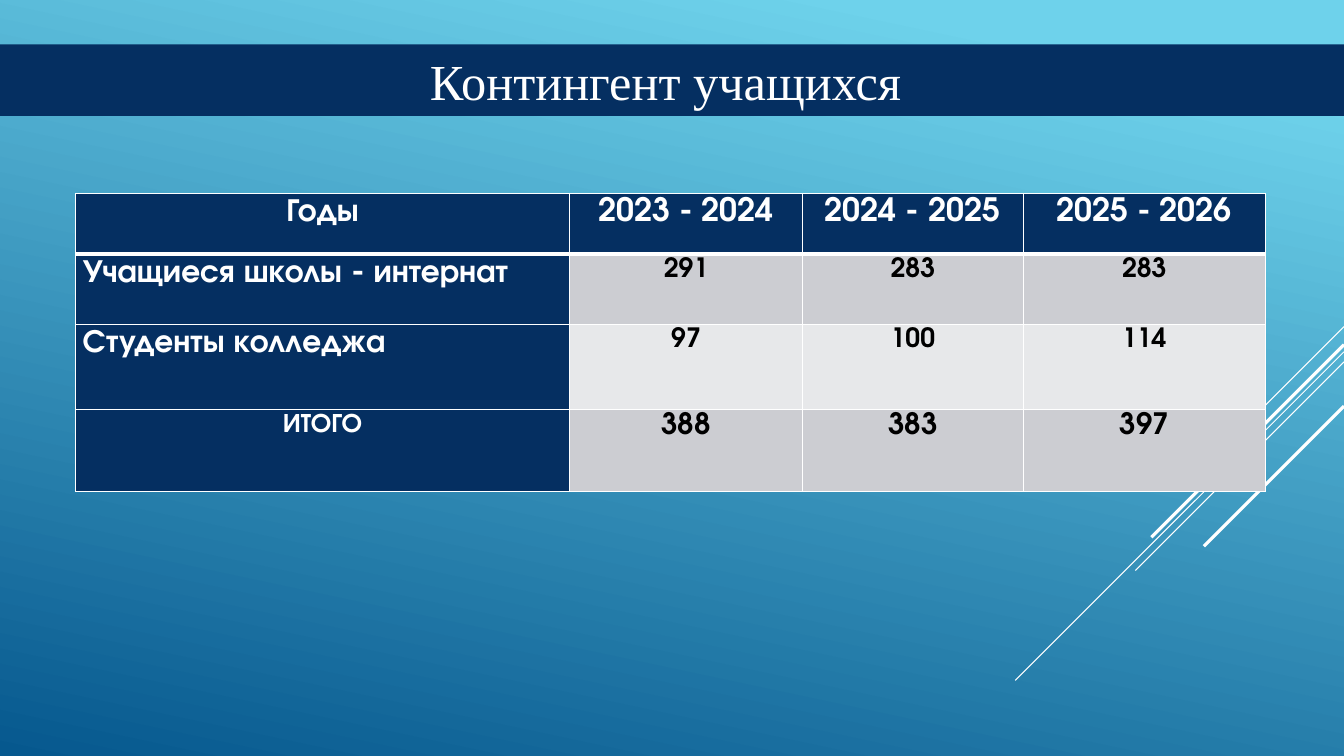
from pptx import Presentation
from pptx import util as u
from pptx.dml.color import RGBColor
from pptx.enum import shapes, text
from pptx.oxml import parse_xml
from pptx.oxml.ns import nsdecls, qn

NAVY = RGBColor(0x05, 0x2F, 0x61)
WHITE = RGBColor(0xFF, 0xFF, 0xFF)
BLACK = RGBColor(0, 0, 0)
GREY = RGBColor(0xCC, 0xCD, 0xD2)
PALE = RGBColor(0xE7, 0xE8, 0xEA)
SKY = RGBColor(0x6E, 0xD2, 0xEB)
DEEP = RGBColor(0x06, 0x58, 0x8E)

# Content
TITLE = "Контингент учащихся "
TITLE_FONT, TABLE_FONT = "Times New Roman", "TeX Gyre Adventor"
ROWS = [
    ("Годы", "2023 - 2024", "2024 - 2025", "2025 - 2026"),
    ("Учащиеся школы - интернат", "291", "283", "283"),
    ("Студенты колледжа", "97", "100", "114"),
    ("ИТОГО", "388", "383", "397"),
]
# Per row: height, label size, value size, value fill, label alignment
CENTER, LEFT = text.PP_ALIGN.CENTER, text.PP_ALIGN.LEFT
ROW_STYLES = [
    (0.6, 23, 23, NAVY, CENTER),
    (0.7, 23, 19, GREY, LEFT),
    (0.84, 23, 19, PALE, LEFT),
    (0.82, 19, 21, GREY, CENTER),
]
COLUMN_WIDTHS = [4.9, 2.31, 2.19, 2.4]
# Diagonals from the right edge: start height, run, weight
DIAGONALS = [(3.24, 1, 0.75), (3.49, 3.26, 0.75), (3.59, 2.07, 0.75),
             (3.42, 1.91, 2.25), (4.03, 1.39, 2.25)]
WIDTH, HEIGHT = 13.33, 7.5


def add_text(para, words, font, size, color, bold=False):
    span = para.add_run()
    span.text = words
    span.font.name = font
    span.font.size = u.Pt(size)
    span.font.bold = bold
    span.font.color.rgb = color


def add_borders(cell, bottom, top):
    props = cell._tc.get_or_add_tcPr()
    weights = [("lnL", 1), ("lnR", 1), ("lnT", top), ("lnB", bottom)]
    for index, (side, weight) in enumerate(weights):
        props.insert(index, parse_xml(
            f'<a:{side} {nsdecls("a")} w="{u.Pt(weight)}"><a:solidFill>'
            f'<a:srgbClr val="{WHITE}"/></a:solidFill></a:{side}>'))


deck = Presentation()
deck.slide_width, deck.slide_height = u.Inches(WIDTH), u.Inches(HEIGHT)
page = deck.slides.add_slide(deck.slide_layouts[6])

# Background gradient
backdrop = page.background.fill
backdrop.gradient()
backdrop.gradient_angle = 360 - 102
for stop, position, color in zip(backdrop.gradient_stops, (0.1, 1), (SKY, DEEP)):
    stop.position = position
    stop.color.rgb = color

# Diagonal lines
for top, run, weight in DIAGONALS:
    diagonal = page.shapes.add_connector(
        shapes.MSO_CONNECTOR.STRAIGHT, u.Inches(WIDTH), u.Inches(top),
        u.Inches(WIDTH - run), u.Inches(top + run))
    diagonal.line.color.rgb = WHITE
    diagonal.line.width = u.Pt(weight)
    diagonal._element.spPr.append(
        diagonal._element.makeelement(qn("a:effectLst"), {}))

# Title band
band = page.shapes.add_shape(shapes.MSO_SHAPE.RECTANGLE, 0, u.Inches(0.44),
                             u.Inches(WIDTH), u.Inches(0.71))
band.shadow.inherit = False
band.fill.solid()
band.fill.fore_color.rgb = NAVY
band.line.fill.background()
frame = band.text_frame
frame.word_wrap = True
frame.auto_size = text.MSO_AUTO_SIZE.SHAPE_TO_FIT_TEXT
frame.vertical_anchor = text.MSO_ANCHOR.MIDDLE
frame.paragraphs[0].alignment = CENTER
add_text(frame.paragraphs[0], TITLE, TITLE_FONT, 36, WHITE)

# Table
table = page.shapes.add_table(
    len(ROWS), len(COLUMN_WIDTHS), u.Inches(0.75), u.Inches(1.92),
    u.Inches(sum(COLUMN_WIDTHS)), u.Inches(sum(s[0] for s in ROW_STYLES))).table
table.first_row = table.horz_banding = False
for column, width in zip(table.columns, COLUMN_WIDTHS):
    column.width = u.Inches(width)

for r, (values, style) in enumerate(zip(ROWS, ROW_STYLES)):
    height, label_size, value_size, value_fill, label_align = style
    table.rows[r].height = u.Inches(height)
    for c, value in enumerate(values):
        is_label = c == 0
        cell = table.cell(r, c)
        cell.margin_left = cell.margin_right = u.Inches(0.07)
        cell.margin_top = cell.margin_bottom = 0
        cell.fill.solid()
        cell.fill.fore_color.rgb = NAVY if is_label else value_fill
        add_borders(cell, bottom=3 if r == 0 else 1, top=3 if r == 1 else 1)
        para = cell.text_frame.paragraphs[0]
        para.alignment = label_align if is_label else CENTER
        para.line_spacing = 1.15
        para.space_after = u.Pt(8)
        add_text(para, value, TABLE_FONT, label_size if is_label else value_size,
                 WHITE if is_label or r == 0 else BLACK, bold=True)

deck.save("out.pptx")
